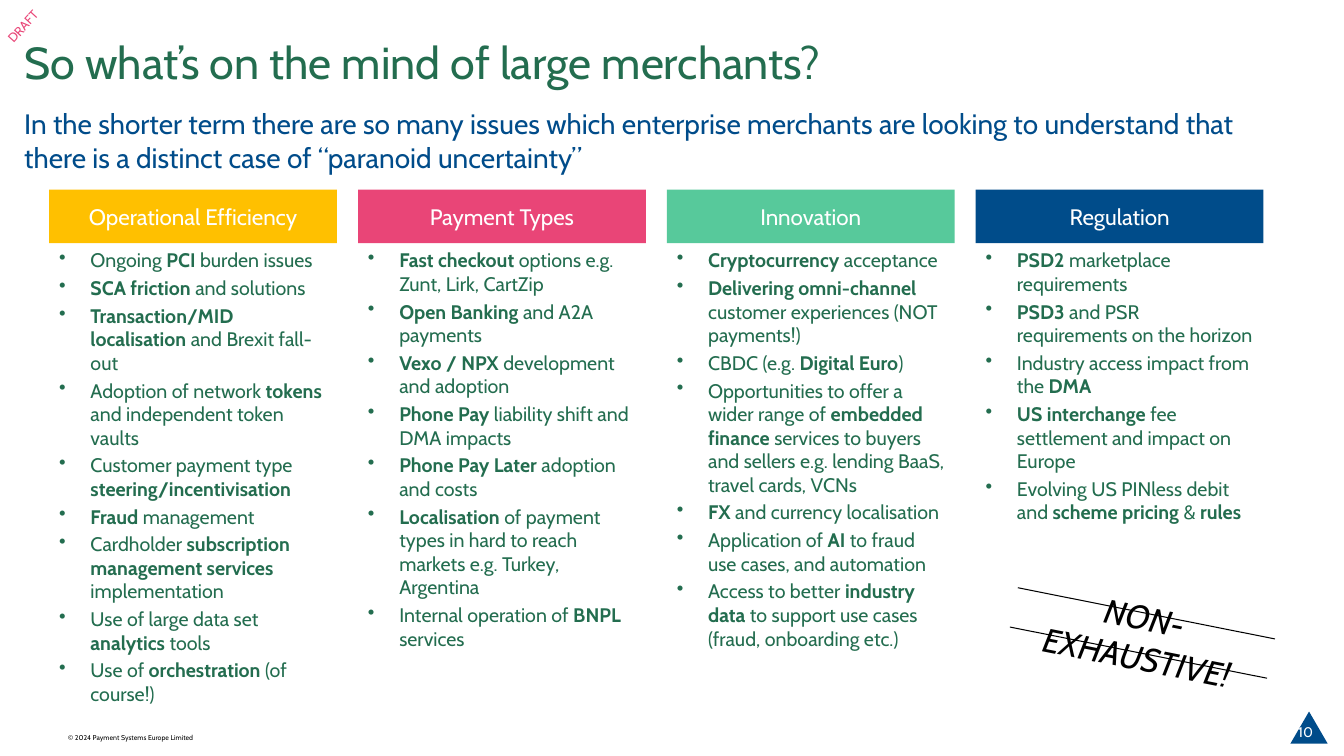
from lxml import etree
from pptx import Presentation
from pptx.dml.color import RGBColor
from pptx.enum.shapes import MSO_CONNECTOR, MSO_SHAPE
from pptx.enum.text import MSO_ANCHOR, MSO_AUTO_SIZE, PP_ALIGN
from pptx.oxml.ns import qn
from pptx.util import Cm, Pt

LEFT, MID = PP_ALIGN.LEFT, PP_ALIGN.CENTER
TOP, CENTRE = MSO_ANCHOR.TOP, MSO_ANCHOR.MIDDLE
FIXED = MSO_AUTO_SIZE.NONE
RECT, PEAK = MSO_SHAPE.RECTANGLE, MSO_SHAPE.ISOSCELES_TRIANGLE
STRAIGHT = MSO_CONNECTOR.STRAIGHT

FONT = "Cabin"
GREEN, BLUE, PINK = "236D4F", "004C8A", "E94577"
AMBER, MINT, WHITE, BLACK = "FFC000", "57C99B", "FFFFFF", "000000"

# Column heading, colour and points; ** switches bold on and off
TOPICS = [
    ("Operational Efficiency", AMBER, [
        "Ongoing **PCI** burden issues",
        "**SCA friction **and solutions",
        "**Transaction/MID localisation **and Brexit fall-out",
        "Adoption of network **tokens** and independent token vaults",
        "Customer payment type **steering/incentivisation**",
        "**Fraud** management",
        "Cardholder **subscription management services **implementation",
        "Use of large data set **analytics** tools",
        "Use of **orchestration** (of course!)",
    ]),
    ("Payment Types", PINK, [
        "**Fast checkout** options e.g. Zunt, Lirk, CartZip",
        "**Open Banking **and A2A payments",
        "**Vexo / NPX **development and adoption",
        "**Phone Pay **liability shift and DMA impacts",
        "**Phone Pay Later **adoption and costs",
        "**Localisation** of payment types in hard to reach markets "
        "e.g. Turkey, Argentina",
        "Internal operation of **BNPL** services",
    ]),
    ("Innovation", MINT, [
        "**Cryptocurrency** acceptance",
        "**Delivering omni-channel **customer experiences (NOT payments!)",
        "CBDC (e.g. **Digital Euro**)",
        "Opportunities to offer a wider range of **embedded finance **"
        "services to buyers and sellers e.g. lending BaaS, travel cards, VCNs",
        "**FX** and currency localisation",
        "Application of **AI **to fraud use cases, and automation",
        "Access to better **industry data** to support use cases "
        "(fraud, onboarding etc.)",
    ]),
    ("Regulation", BLUE, [
        "**PSD2 **marketplace requirements",
        "**PSD3** and PSR requirements on the horizon",
        "Industry access impact from the **DMA**",
        "**US interchange **fee settlement and impact on Europe",
        "Evolving US PINless debit and** scheme pricing **& **rules**",
    ]),
]


def rgb(code):
    return RGBColor.from_string(code)


def write(shape, lines, size=14, color=GREEN, align=LEFT, anchor=TOP,
          after=0, spacing=None, bullet=False, italic=False, wrap=True):
    frame = shape.text_frame
    frame.auto_size = FIXED
    frame.word_wrap = wrap
    frame.vertical_anchor = anchor
    for i, line in enumerate(lines):
        para = frame.add_paragraph() if i else frame.paragraphs[0]
        para.alignment = align
        para.space_after = Pt(after)
        if spacing:
            para.line_spacing = spacing
        if bullet:
            props = para._p.get_or_add_pPr()
            props.set("marL", str(Cm(0.79)))
            props.set("indent", str(-Cm(0.79)))
            etree.SubElement(props, qn("a:buChar")).set("char", "•")
        for j, part in enumerate(line.split("**")):
            if part:
                run = para.add_run()
                run.text = part
                font = run.font
                font.name, font.size = FONT, Pt(size)
                font.bold, font.italic = j % 2 == 1, italic
                font.color.rgb = rgb(color)


def label(slide, box, lines, turn=0, **style):
    shape = slide.shapes.add_textbox(*map(Cm, box))
    shape.rotation = turn
    write(shape, lines, **style)


def block(slide, kind, box, fill):
    shape = slide.shapes.add_shape(kind, *map(Cm, box))
    shape.shadow.inherit = False
    shape.fill.solid()
    shape.fill.fore_color.rgb = rgb(fill)
    shape.line.fill.background()
    return shape


def header(slide, box):
    x, y, w, h = box
    title = slide.shapes.title
    title.left, title.top, title.width, title.height = map(Cm, (x, y, w, h))
    write(title, ["So what’s on the mind of large merchants?"],
          size=32, spacing=0.9)
    label(slide, (x, y + 1.68, w, h),
          ["In the shorter term there are so many issues which enterprise "
           "merchants are looking to understand that there is a distinct "
           "case of “paranoid uncertainty”"], size=20, color=BLUE)


def column(slide, box, name, fill, points):
    x, y, w, h = box
    head = 1.35
    write(block(slide, RECT, (x, y, w, head), fill), [name], size=16,
          color=WHITE, align=MID, anchor=CENTRE)
    label(slide, (x, y + head, w, h - head), points, after=3, bullet=True)


def columns(slide, box):
    x, y, w, h = box
    gap = 0.53
    wide = (w - gap * (len(TOPICS) - 1)) / len(TOPICS)
    for i, topic in enumerate(TOPICS):
        column(slide, (x + i * (wide + gap), y, wide, h), *topic)


def stamp(slide, box):
    x, y, w, h = box
    label(slide, (x + 0.4, y, w - 0.8, h), ["NON-EXHAUSTIVE!"], turn=11.3,
          size=24, color=BLACK, align=MID, anchor=CENTRE, italic=True)
    # Two parallel strike lines
    for dx, dy in ((0.2, 0), (0, 0.99)):
        a, b = x + dx, y - 0.09 + dy
        line = slide.shapes.add_connector(
            STRAIGHT, *map(Cm, (a, b, a + 6.48, b + 1.29)))
        line.line.color.rgb = rgb(BLACK)
        line.line.width = Pt(0.75)
        etree.SubElement(line._element.spPr, qn("a:effectLst"))


def margin(slide, box):
    x, y, w, h = box
    # Draft mark in the top corner
    label(slide, (x - 0.43, y + 0.15, 2.01, 1.04), ["DRAFT"], turn=312.3,
          size=9, color=PINK, align=MID, anchor=CENTRE, wrap=False)
    # Copyright line and page number
    label(slide, (x + 1.47, h - 0.69, 3.73, 0.48),
          ["© 2024 Payment Systems Europe Limited"],
          size=5, color=BLACK, wrap=False)
    block(slide, PEAK, (w - 1.35, h - 1.12, 0.94, 0.81), BLUE)
    label(slide, (w - 1.7, h - 1.12, 1.47, 1.02), ["10"],
          size=10, color=WHITE, align=MID, anchor=CENTRE)


def main():
    deck = Presentation()
    deck.slide_width, deck.slide_height = Cm(33.87), Cm(19.05)
    slide = deck.slides.add_slide(deck.slide_layouts[5])
    margin(slide, (0, 0, 33.87, 19.05))
    header(slide, (0.36, 0.89, 32.44, 1.57))
    columns(slide, (1.24, 4.78, 30.6, 12.67))
    stamp(slide, (25.45, 14.9, 6.6, 2.3))
    deck.save("out.pptx")


if __name__ == "__main__":
    main()
